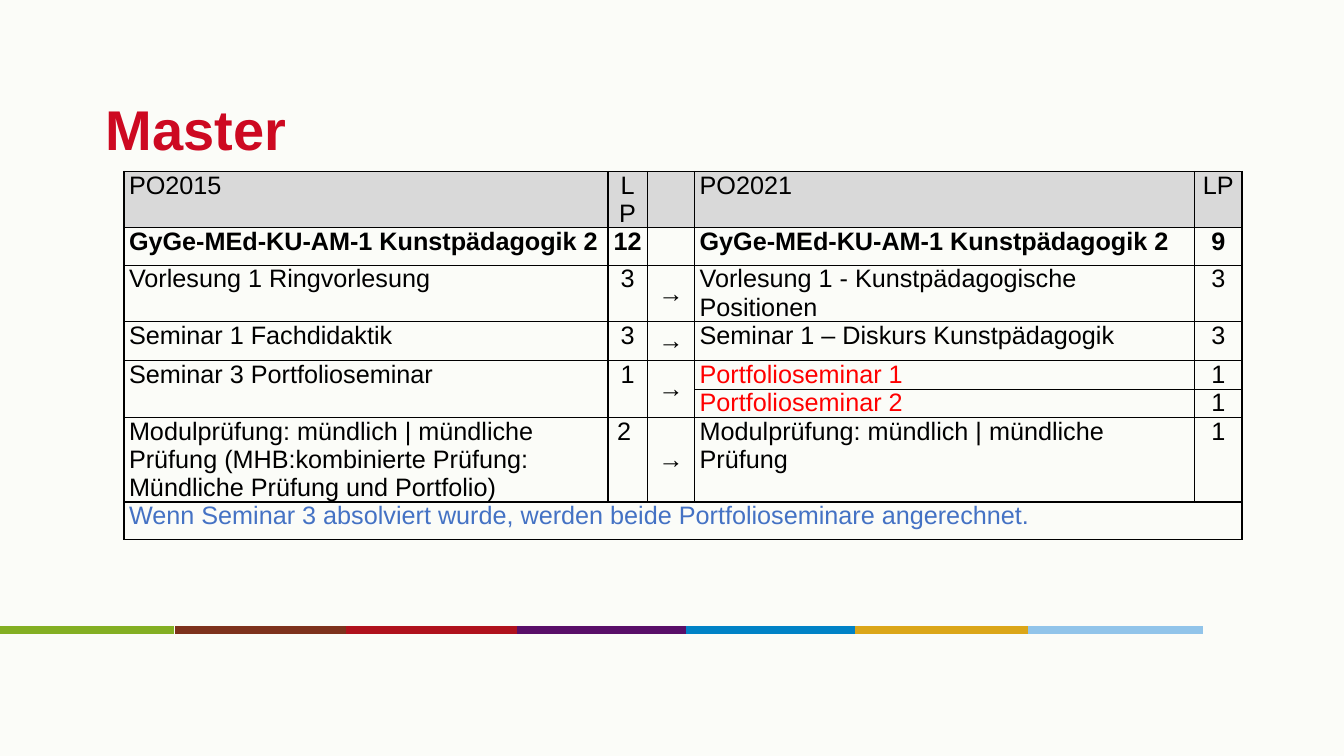
"""Build the slide comparing the Master modules of PO2015 and PO2021."""
from lxml import etree
from pptx import Presentation
from pptx.dml.color import RGBColor
from pptx.enum.shapes import MSO_CONNECTOR
from pptx.enum.text import MSO_ANCHOR, MSO_AUTO_SIZE, PP_ALIGN
from pptx.oxml import parse_xml
from pptx.oxml.ns import nsdecls, qn
from pptx.util import Inches, Pt

STRAIGHT = MSO_CONNECTOR.STRAIGHT
MIDDLE, TOP = MSO_ANCHOR.MIDDLE, MSO_ANCHOR.TOP
LEFT, CENTER = PP_ALIGN.LEFT, PP_ALIGN.CENTER
NO_AUTOFIT = MSO_AUTO_SIZE.NONE

COLOURS = {
    "background": "FBFCF8",
    "title": "CD0921",
    "text": "000000",
    "header": "D9D9D9",
    "new": "FF0000",
    "note": "4472C4",
}
STRIPES = [
    (0, "83AF23"), (1.74, "7D321D"), (3.43, "AF111D"), (5.13, "590F68"),
    (6.8, "0082C6"), (8.48, "DBA619"), (10.2, "91C4EA"),
]
STRIPE_LENGTH, STRIPE_TOP = 1.73, 6.25
COLUMN_WIDTHS = [4.8, 0.39, 0.47, 4.96, 0.47]
ROW_HEIGHTS = [0.56, 0.37, 0.56, 0.39, 0.28, 0.28, 0.84, 0.37]
ARROW_COLUMN = 2
MODULE = "GyGe-MEd-KU-AM-1 Kunstpädagogik 2"
ROWS = [
    ["PO2015", "LP", "", "PO2021", "LP"],
    [MODULE, "12", "", MODULE, "9"],
    ["Vorlesung 1 Ringvorlesung", "3", "→", "Vorlesung 1 - Kunstpädagogische Positionen", "3"],
    ["Seminar 1 Fachdidaktik", "3", "→", "Seminar 1 – Diskurs Kunstpädagogik", "3"],
    ["Seminar 3 Portfolioseminar", "1", "→", "Portfolioseminar 1", "1"],
    ["", "", "", "Portfolioseminar 2", "1"],
    ["Modulprüfung: mündlich | mündliche Prüfung (MHB:kombinierte Prüfung: "
     "Mündliche Prüfung und Portfolio)", "2 ", "→",
     "Modulprüfung: mündlich | mündliche Prüfung", "1"],
    ["Wenn Seminar 3 absolviert wurde, werden beide Portfolioseminare angerechnet.",
     "", "", "", ""],
]
TEXT_COLOURS = {(4, 3): "new", (5, 3): "new", (7, 0): "note"}
CELL_FORMAT = {
    "margin_left": Inches(0.05), "margin_right": Inches(0.05),
    "margin_top": 0, "margin_bottom": 0,
}
TITLE_FORMAT = {
    "margin_left": Inches(0.05), "margin_right": Inches(0.05),
    "margin_top": Inches(0.05), "margin_bottom": Inches(0.05),
    "vertical_anchor": MIDDLE, "word_wrap": True, "auto_size": NO_AUTOFIT,
}


def set_font(font, size, colour, bold):
    for name, value in {"name": "Arial", "size": Pt(size), "bold": bold}.items():
        setattr(font, name, value)
    font.color.rgb = RGBColor.from_string(COLOURS[colour])


def add_borders(cell):
    properties = cell._tc.get_or_add_tcPr()
    for side in ("lnL", "lnR", "lnT", "lnB"):
        properties.append(parse_xml(
            f'<a:{side} {nsdecls("a")} w="12700"><a:solidFill>'
            f'<a:srgbClr val="{COLOURS["text"]}"/></a:solidFill></a:{side}>'))


presentation = Presentation()
presentation.slide_width = Inches(13.33)
presentation.slide_height = Inches(7.5)
slide = presentation.slides.add_slide(presentation.slide_layouts[5])
slide.background.fill.solid()
slide.background.fill.fore_color.rgb = RGBColor.from_string(COLOURS["background"])

for left, colour in STRIPES:
    stripe = slide.shapes.add_connector(
        STRAIGHT, Inches(left), Inches(STRIPE_TOP),
        Inches(left + STRIPE_LENGTH), Inches(STRIPE_TOP))
    stripe.line.color.rgb = RGBColor.from_string(colour)
    stripe.line.width = Pt(5.5)
    etree.SubElement(stripe._element.spPr, qn("a:effectLst"))

title = slide.shapes.title
title.left, title.top = Inches(1), Inches(0.65)
title.width, title.height = Inches(11.33), Inches(1.25)
title.text_frame.text = "Master"
for name, value in TITLE_FORMAT.items():
    setattr(title.text_frame, name, value)
title_paragraph = title.text_frame.paragraphs[0]
title_paragraph.alignment = LEFT
set_font(title_paragraph.runs[0].font, 40, "title", True)

table = slide.shapes.add_table(
    len(ROWS), len(COLUMN_WIDTHS), Inches(1.23), Inches(1.7),
    Inches(sum(COLUMN_WIDTHS)), Inches(sum(ROW_HEIGHTS))).table
table.first_row = False
table.horz_banding = False
for column, width in zip(table.columns, COLUMN_WIDTHS):
    column.width = Inches(width)
for row, height in zip(table.rows, ROW_HEIGHTS):
    row.height = Inches(height)

for row_index, texts in enumerate(ROWS):
    for column_index, text in enumerate(texts):
        cell = table.cell(row_index, column_index)
        for name, value in CELL_FORMAT.items():
            setattr(cell, name, value)
        cell.vertical_anchor = MIDDLE if column_index == ARROW_COLUMN else TOP
        add_borders(cell)
        if row_index == 0:
            cell.fill.solid()
            cell.fill.fore_color.rgb = RGBColor.from_string(COLOURS["header"])
        else:
            cell.fill.background()
        if text:
            cell.text = text
            paragraph = cell.text_frame.paragraphs[0]
            paragraph.alignment = LEFT if column_index in (0, 3) else CENTER
            colour = TEXT_COLOURS.get((row_index, column_index), "text")
            set_font(paragraph.runs[0].font, 18, colour, row_index == 1)

for column_index in range(3):
    table.cell(4, column_index).merge(table.cell(5, column_index))
table.cell(7, 0).merge(table.cell(7, 4))

presentation.save("out.pptx")
